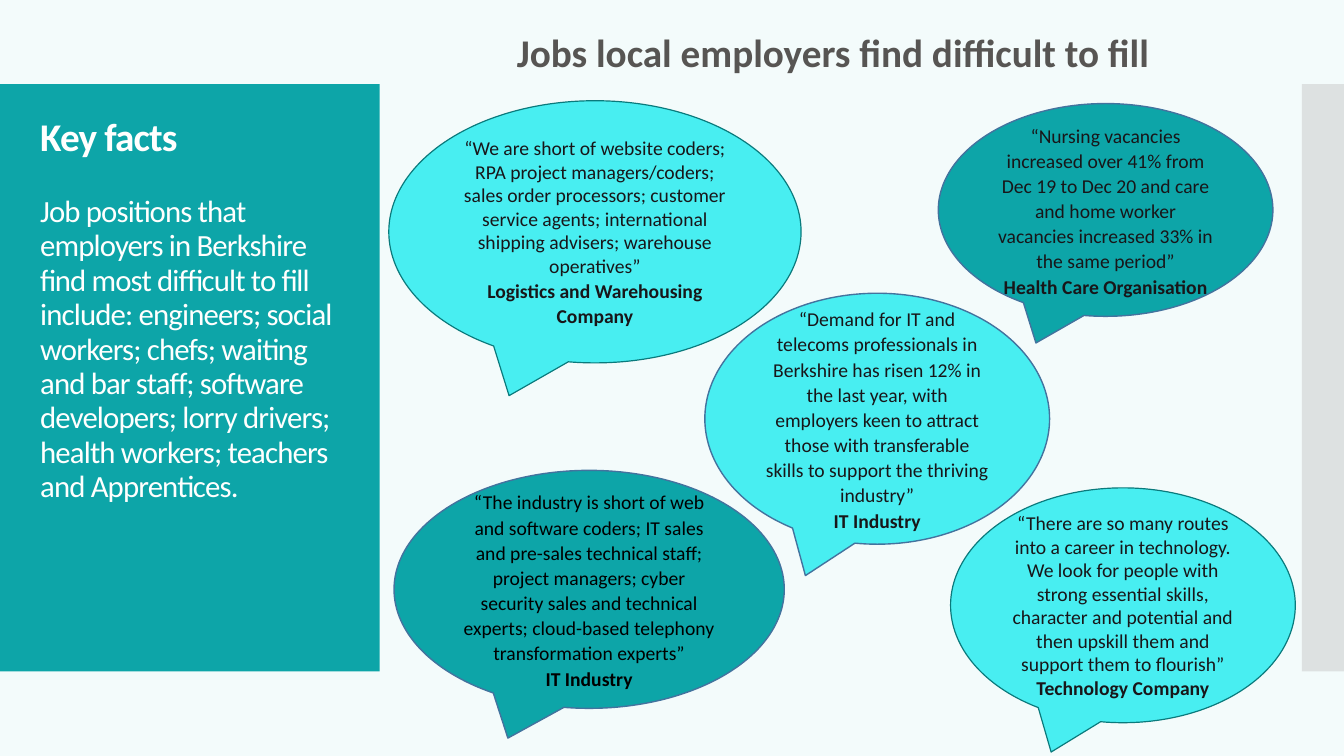
from lxml import etree
from pptx import Presentation
from pptx.dml.color import RGBColor
from pptx.enum import shapes, text
from pptx.oxml import ns
from pptx.util import Pt

TEAL = RGBColor(0x0D, 0xA5, 0xA8)
AQUA = RGBColor(0x48, 0xEE, 0xF1)
DEEP = RGBColor(0x0A, 0x7A, 0x7C)
BLUE = RGBColor(0x43, 0x73, 0x9E)
PALE = RGBColor(0xF3, 0xFB, 0xFB)
GREY = RGBColor(0xC8, 0xC8, 0xC8)
SLATE = RGBColor(0x57, 0x55, 0x53)
INK = RGBColor(0x18, 0x16, 0x19)
BLACK = RGBColor(0, 0, 0)
WHITE = RGBColor(0xFF, 0xFF, 0xFE)

HEAD = "Jobs local employers find difficult to fill "
FACTS = [
    ("Key facts", 28, True),
    ("Job positions that employers in Berkshire find most difficult to fill include: "
     "engineers; social workers; chefs; waiting and bar staff; software developers; "
     "lorry drivers; health workers; teachers and Apprentices.", 22, False),
]
LEAD = 24.6
THIN, FULL = (DEEP, 0.85), (BLUE, 1)
QUOTES = [
    ((679, 348.5, 246.25, 167.75), AQUA, THIN, INK, (1, 1), 0,
     "“There are so many routes into a career in technology. We look for people with "
     "strong essential skills, character and potential and then upskill them and "
     "support them to flourish”", "Technology Company"),
    ((281.5, 336, 278.75, 170), TEAL, FULL, BLACK, (1.07, 1.07), 0,
     "“The industry is short of web and software coders; IT sales and pre-sales "
     "technical staff; project managers; cyber security sales and technical experts; "
     "cloud-based telephony transformation experts”", "IT Industry"),
    ((670.25, 74, 239, 152), TEAL, FULL, INK, (1.07, 1.07), 0,
     "“Nursing vacancies increased over 41% from Dec 19 to Dec 20 and care and home "
     "worker vacancies increased 33% in the same period”", "Health Care Organisation"),
    ((503.5, 209.5, 246.25, 179.25), AQUA, FULL, INK, (1.07, 1.07), 0,
     "“Demand for IT and telecoms professionals in Berkshire has risen 12% in the last "
     "year, with employers keen to attract those with transferable skills to support "
     "the thriving industry”", "IT Industry"),
    ((277.75, 72, 294.5, 187.25), AQUA, THIN, INK, (1, 1.07), 8,
     "“We are short of website coders; RPA project managers/coders; sales order "
     "processors; customer service agents; international shipping advisers; warehouse "
     "operatives”", "Logistics and Warehousing Company"),
]


def add_run(para, words, size, color, bold=False):
    run = para.add_run()
    run.text = words
    font = run.font
    font.name, font.size, font.bold = "Calibri", Pt(size), bold
    font.color.rgb = color
    return run


def add_form(kind, box, fill):
    form = slide.shapes.add_shape(kind, *map(Pt, box))
    form.shadow.inherit = False
    form.fill.solid()
    form.fill.fore_color.rgb = fill
    form.line.fill.background()
    return form


def add_quote(box, fill, edge, ink, leads, after, words, source):
    form = add_form(shapes.MSO_SHAPE.OVAL_CALLOUT, box, fill)
    form.line.color.rgb = edge[0]
    form.line.width = Pt(edge[1])
    frame = form.text_frame
    frame.word_wrap = True
    frame.vertical_anchor = text.MSO_ANCHOR.MIDDLE
    paras = [frame.paragraphs[0], frame.add_paragraph()]
    for para, lead, part, bold in zip(paras, leads, (words, source), (False, True)):
        para.alignment = text.PP_ALIGN.CENTER
        para.line_spacing = lead
        add_run(para, part, 14, ink, bold)
    paras[1].space_after = Pt(after)


deck = Presentation()
deck.slide_width, deck.slide_height = Pt(960), Pt(540)
slide = deck.slides.add_slide(deck.slide_layouts[5])
slide.background.fill.solid()
slide.background.fill.fore_color.rgb = PALE

title = slide.shapes.title
panel = add_form(shapes.MSO_SHAPE.RECTANGLE, (0, 60, 271.25, 419.5), TEAL)
strip = add_form(shapes.MSO_SHAPE.RECTANGLE, (930, 60, 30, 419.5), GREY)
tint = strip.fill._xPr.find(".//" + ns.qn("a:srgbClr"))
etree.SubElement(tint, ns.qn("a:alpha"), val="50000")
strip._element.addnext(title._element)

title.left, title.top, title.width, title.height = map(Pt, (21.5, 85.75, 229.75, 362))
frame = title.text_frame
frame.word_wrap = True
frame.auto_size = text.MSO_AUTO_SIZE.NONE
frame.vertical_anchor = text.MSO_ANCHOR.TOP
for spot, (words, size, bold) in enumerate(FACTS):
    para = frame.add_paragraph() if spot else frame.paragraphs[0]
    para.alignment = text.PP_ALIGN.LEFT
    para.line_spacing = Pt(LEAD)
    para.space_before = Pt(LEAD * spot)
    run = add_run(para, words, size, WHITE, bold)
    run.font._element.set("spc", "-60")

for quote in QUOTES[:-1]:
    add_quote(*quote)

head = slide.shapes.add_textbox(*map(Pt, (281.5, 16.5, 633, 41)))
head.text_frame.word_wrap = True
para = head.text_frame.paragraphs[0]
para.alignment = text.PP_ALIGN.CENTER
add_run(para, HEAD, 28, SLATE, True)

add_quote(*QUOTES[-1])
deck.save("out.pptx")
